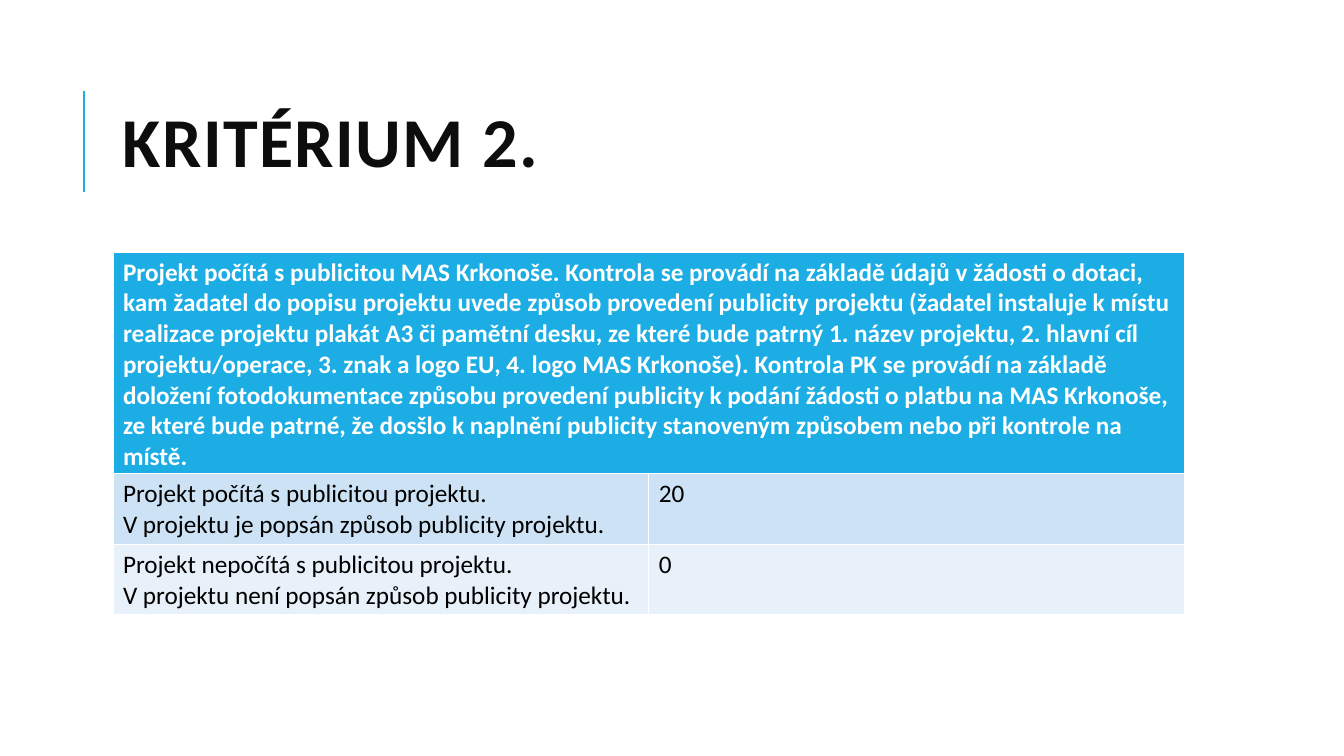
from pptx import Presentation
from pptx.dml.color import RGBColor
from pptx.enum.shapes import MSO_CONNECTOR as Conn
from pptx.enum.text import MSO_ANCHOR as Anchor
from pptx.oxml.ns import qn
from pptx.util import Inches, Pt
from lxml.etree import SubElement

BLUE = RGBColor(0x1C, 0xAD, 0xE4)
PALE = RGBColor(0xCD, 0xE3, 0xF5)
LIGHT = RGBColor(0xE8, 0xF1, 0xFA)
INK = RGBColor(0x0D, 0x0D, 0x0D)
BLACK = RGBColor(0, 0, 0)
WHITE = RGBColor(0xFF, 0xFF, 0xFF)
FACE = "Calibri"

HEAD = (
    "Projekt počítá s publicitou MAS Krkonoše. Kontrola se provádí na základě "
    "údajů v žádosti o dotaci, kam žadatel do popisu projektu uvede způsob "
    "provedení publicity projektu (žadatel instaluje k místu realizace projektu "
    "plakát A3 či pamětní desku, ze které bude patrný 1. název projektu, "
    "2. hlavní cíl projektu/operace, 3. znak a logo EU, 4. logo MAS Krkonoše). "
    "Kontrola PK se provádí na základě doložení fotodokumentace způsobu provedení "
    "publicity k podání žádosti o platbu na MAS Krkonoše, ze které bude patrné, "
    "že dosšlo k naplnění publicity stanoveným způsobem nebo při kontrole na místě."
)
ROWS = [
    (PALE, ["Projekt počítá s publicitou projektu.",
            "V projektu je popsán způsob publicity projektu."], "20"),
    (LIGHT, ["Projekt nepočítá s publicitou projektu.",
             "V projektu není popsán způsob publicity projektu."], "0"),
]


def write(frame, lines, size, color, bold=False):
    """Fill a text frame, one paragraph per line."""
    for i, line in enumerate(lines):
        para = frame.add_paragraph() if i else frame.paragraphs[0]
        run = para.add_run()
        run.text = line
        font = run.font
        font.name, font.size, font.bold = FACE, Pt(size), bold
        font.color.rgb = color


def add_title(slide, left, top, width, height):
    # Accent rule beside the title
    x = Inches(left - 0.29)
    rule = slide.shapes.add_connector(
        Conn.STRAIGHT, x, Inches(top + 1.26), x, Inches(top + 0.26))
    rule.line.color.rgb = BLUE
    rule.line.width = Pt(1.5)
    SubElement(rule._element.spPr, qn("a:effectLst"))

    # Title text
    box = slide.shapes.add_textbox(
        Inches(left), Inches(top), Inches(width), Inches(height))
    frame = box.text_frame
    frame.word_wrap = True
    frame.vertical_anchor = Anchor.MIDDLE
    write(frame, ["KRITÉRIUM 2."], 50, INK, True)
    para = frame.paragraphs[0]
    para.line_spacing = 0.8
    para.runs[0].font._element.set("spc", "100")


def fill_cell(cell, lines, fill, color, bold=False):
    cell.fill.solid()
    cell.fill.fore_color.rgb = fill
    write(cell.text_frame, lines, 18, color, bold)


def add_grid(slide, left, top, width, height):
    table = slide.shapes.add_table(
        len(ROWS) + 1, 2, Inches(left), Inches(top),
        Inches(width), Inches(height)).table
    low = 0.7
    table.rows[0].height = Inches(height - low * len(ROWS))

    # Header across both columns
    head = table.cell(0, 0)
    head.merge(table.cell(0, 1))
    fill_cell(head, [HEAD], BLUE, WHITE, True)

    # Criteria and points
    for i, (fill, lines, points) in enumerate(ROWS, 1):
        table.rows[i].height = Inches(low)
        fill_cell(table.cell(i, 0), lines, fill, BLACK)
        fill_cell(table.cell(i, 1), [points], fill, BLACK)


def main():
    deck = Presentation()
    deck.slide_width, deck.slide_height = Inches(13.33), Inches(7.5)
    slide = deck.slides.add_slide(deck.slide_layouts[6])
    add_title(slide, 1.12, 0.64, 10.63, 1.64)
    add_grid(slide, 1.12, 2.5, 10.63, 3.6)
    deck.save("out.pptx")


if __name__ == "__main__":
    main()
